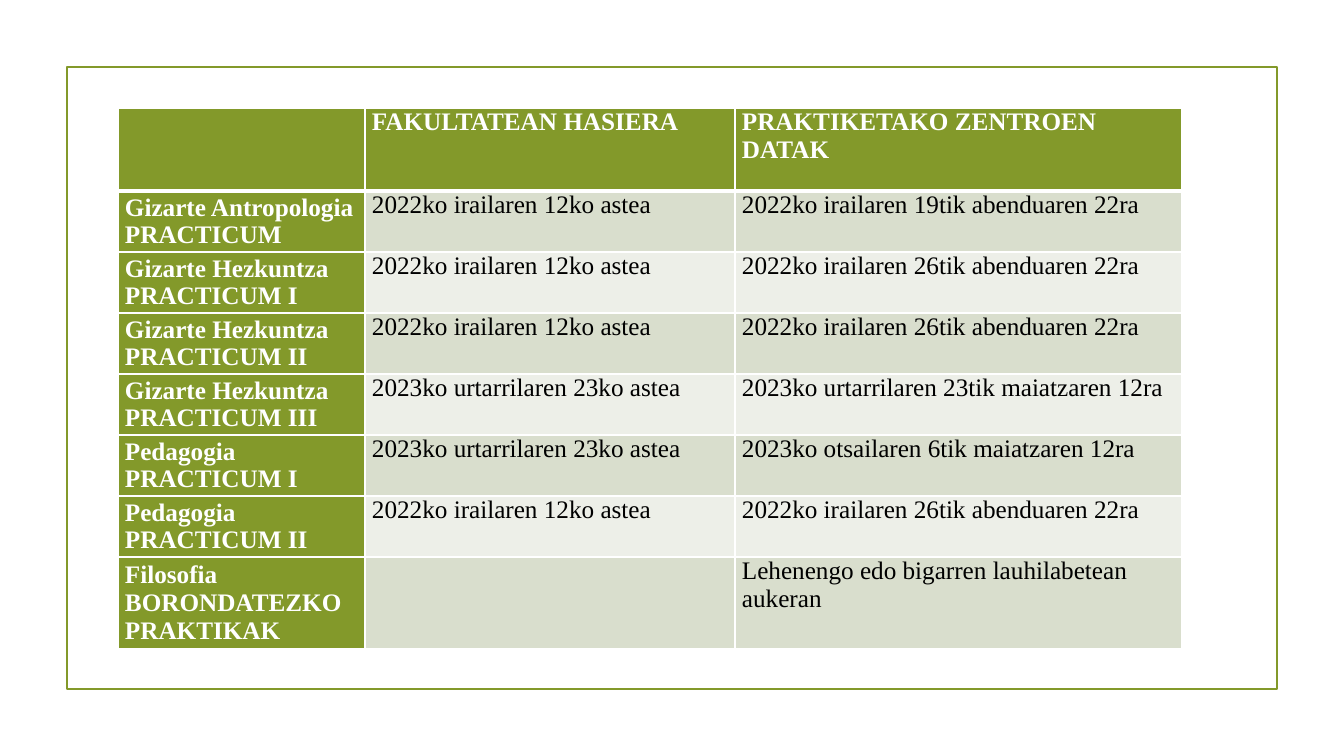
import dataclasses

import lxml.etree
import pptx
import pptx.dml.color
import pptx.enum.shapes
import pptx.enum.text
import pptx.oxml.ns
import pptx.util

GREEN = pptx.dml.color.RGBColor(0x83, 0x99, 0x2A)
BAND_DARK = pptx.dml.color.RGBColor(0xD9, 0xDE, 0xCD)
BAND_LIGHT = pptx.dml.color.RGBColor(0xED, 0xEF, 0xE8)
WHITE = pptx.dml.color.RGBColor(0xFF, 0xFF, 0xFF)
BLACK = pptx.dml.color.RGBColor(0x00, 0x00, 0x00)

FONT = "Times New Roman"
PX_PER_INCH = 100.8
COLUMN_WIDTHS = (247, 370, 447)
HEADER_HEIGHT = 83
ROW_HEIGHT = 61
LAST_ROW_HEIGHT = 92
HEADINGS = ("", "FAKULTATEAN HASIERA", "PRAKTIKETAKO ZENTROEN DATAK")


@dataclasses.dataclass(frozen=True)
class Practicum:
    """One table row; each label item is a paragraph, "\n" breaks a line in it."""

    label: tuple[str, ...]
    start: str
    dates: str


SEPTEMBER = "2022ko irailaren 12ko astea"
JANUARY = "2023ko urtarrilaren 23ko astea"
AUTUMN_DATES = "2022ko irailaren 26tik abenduaren 22ra"

PRACTICUMS = (
    Practicum(("Gizarte Antropologia\nPRACTICUM",), SEPTEMBER,
              "2022ko irailaren 19tik abenduaren 22ra"),
    Practicum(("Gizarte Hezkuntza\nPRACTICUM I",), SEPTEMBER, AUTUMN_DATES),
    Practicum(("Gizarte Hezkuntza\nPRACTICUM II",), SEPTEMBER, AUTUMN_DATES),
    Practicum(("Gizarte Hezkuntza\nPRACTICUM III",), JANUARY,
              "2023ko urtarrilaren 23tik maiatzaren 12ra"),
    Practicum(("Pedagogia\nPRACTICUM I",), JANUARY,
              "2023ko otsailaren 6tik maiatzaren 12ra"),
    Practicum(("Pedagogia\nPRACTICUM II",), SEPTEMBER, AUTUMN_DATES),
    Practicum(("Filosofia", "BORONDATEZKO\nPRAKTIKAK"), "",
              "Lehenengo edo bigarren lauhilabetean aukeran"),
)


def px(length: int) -> pptx.util.Emu:
    return pptx.util.Inches(length / PX_PER_INCH)


def add_frame(page) -> None:
    frame = page.shapes.add_shape(
        pptx.enum.shapes.MSO_SHAPE.RECTANGLE, px(67), px(67), px(1210), px(622))
    frame.shadow.inherit = False
    frame.fill.background()
    frame.line.color.rgb = GREEN
    frame.line.width = pptx.util.Pt(1.25)


def set_borders(cell, top: int = 1, bottom: int = 1) -> None:
    """Draw white borders; widths are in points."""
    properties = cell._tc.get_or_add_tcPr()
    for side, width in (("L", 1), ("R", 1), ("T", top), ("B", bottom)):
        line = lxml.etree.SubElement(properties, pptx.oxml.ns.qn(f"a:ln{side}"),
                                     w=str(pptx.util.Pt(width)))
        fill = lxml.etree.SubElement(line, pptx.oxml.ns.qn("a:solidFill"))
        lxml.etree.SubElement(fill, pptx.oxml.ns.qn("a:srgbClr"), val=str(WHITE))


def write_cell(cell, paragraphs: tuple[str, ...],
               color: pptx.dml.color.RGBColor, bold: bool) -> None:
    cell.margin_left = cell.margin_right = px(7)
    cell.margin_top = cell.margin_bottom = 0
    for number, text in enumerate(paragraphs):
        frame = cell.text_frame
        para = frame.add_paragraph() if number else frame.paragraphs[0]
        para.font.size = pptx.util.Pt(18)
        for line_number, line in enumerate(filter(None, text.split("\n"))):
            if line_number:
                para.add_line_break()
            span = para.add_run()
            span.text = line
            span.font.name = FONT
            span.font.size = pptx.util.Pt(18)
            span.font.bold = bold
            span.font.color.rgb = color


def fill_cell(cell, color: pptx.dml.color.RGBColor) -> None:
    cell.fill.solid()
    cell.fill.fore_color.rgb = color


def add_calendar(page) -> None:
    heights = (HEADER_HEIGHT, *[ROW_HEIGHT] * (len(PRACTICUMS) - 1), LAST_ROW_HEIGHT)
    table = page.shapes.add_table(
        len(heights), len(COLUMN_WIDTHS), px(118), px(108),
        px(sum(COLUMN_WIDTHS)), px(sum(heights))).table
    table.first_col = True
    for column, width in zip(table.columns, COLUMN_WIDTHS):
        column.width = px(width)
    for row, height in zip(table.rows, heights):
        row.height = px(height)

    for cell, heading in zip(table.rows[0].cells, HEADINGS):
        set_borders(cell, bottom=3)
        fill_cell(cell, GREEN)
        write_cell(cell, (heading,), WHITE, True)

    for number, practicum in enumerate(PRACTICUMS):
        band = BAND_LIGHT if number % 2 else BAND_DARK
        contents = (practicum.label, (practicum.start,), (practicum.dates,))
        for column, paragraphs in enumerate(contents):
            cell = table.cell(number + 1, column)
            is_label = column == 0
            set_borders(cell, top=1 if number else 3)
            fill_cell(cell, GREEN if is_label else band)
            write_cell(cell, paragraphs, WHITE if is_label else BLACK, is_label)
            if is_label:
                cell.vertical_anchor = pptx.enum.text.MSO_ANCHOR.MIDDLE


def main() -> None:
    deck = pptx.Presentation()
    deck.slide_width = px(1344)
    deck.slide_height = px(756)
    page = deck.slides.add_slide(deck.slide_layouts[6])
    add_frame(page)
    add_calendar(page)
    deck.save("out.pptx")


if __name__ == "__main__":
    main()
